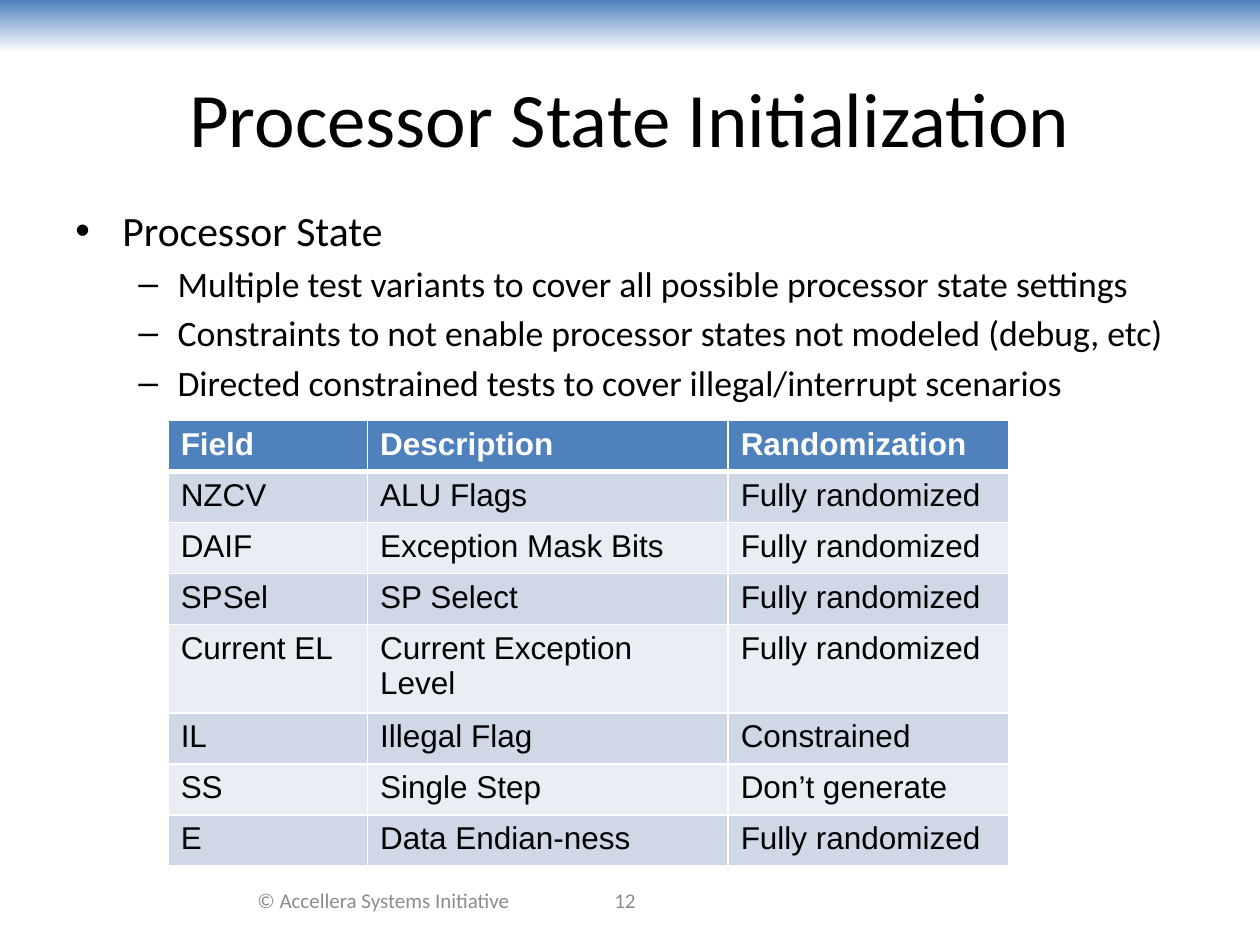
from lxml import etree
from pptx import Presentation
from pptx.dml.color import RGBColor
from pptx.enum import shapes, text
from pptx.oxml.ns import qn
from pptx.util import Cm, Pt

# Content
TITLE = "Processor State Initialization"
BULLETS = [
    (0, "Processor State"),
    (1, "Multiple test variants to cover all possible processor state settings"),
    (1, "Constraints to not enable processor states not modeled (debug, etc)"),
    (1, "Directed constrained tests to cover illegal/interrupt scenarios"),
]
STATE_FIELDS = [
    ("Field", "Description", "Randomization"),
    ("NZCV", "ALU Flags", "Fully randomized"),
    ("DAIF", "Exception Mask Bits", "Fully randomized"),
    ("SPSel", "SP Select", "Fully randomized"),
    ("Current EL", "Current Exception Level", "Fully randomized"),
    ("IL", "Illegal Flag", "Constrained"),
    ("SS", "Single Step", "Don’t generate"),
    ("E", "Data Endian-ness", "Fully randomized"),
]
# Footer text, left and width in cm
FOOTERS = [("© Accellera Systems Initiative", 4.66, 6.14), ("12", 10.16, 4.88)]

# Style
COLORS = {"blue": "4F81BD", "white": "FFFFFF", "black": "000000",
          "gray": "8C8C8C", "band_dark": "D0D8E8", "band_light": "E9EDF4"}
# Per level: bullet, size pt, left margin cm, hanging cm, space before pt
LEVELS = [("•", 23.8, 0.95, 0.95, 0), ("–", 20.4, 2.06, 0.79, 3.8)]
COLUMN_WIDTHS = (4.02, 7.27, 5.65)
ROW_HEIGHT = 1.03


def color(name):
    return RGBColor.from_string(COLORS[name])


def style(paragraph, size, color_name, font="Calibri", bold=False):
    paragraph.font.name = font
    paragraph.font.size = Pt(size)
    paragraph.font.bold = bold
    paragraph.font.color.rgb = color(color_name)


def add_text_frame(slide, left, top, width, height, anchor):
    box = slide.shapes.add_textbox(Cm(left), Cm(top), Cm(width), Cm(height))
    frame = box.text_frame
    frame.word_wrap = True
    frame.vertical_anchor = anchor
    return frame


def add_centered(slide, words, left, top, width, height, size, color_name):
    frame = add_text_frame(slide, left, top, width, height, text.MSO_ANCHOR.MIDDLE)
    paragraph = frame.paragraphs[0]
    paragraph.text = words
    paragraph.alignment = text.PP_ALIGN.CENTER
    style(paragraph, size, color_name)


def add_band(slide, width):
    band = slide.shapes.add_shape(shapes.MSO_SHAPE.RECTANGLE, 0, 0, width, Cm(1.06))
    band.shadow.inherit = False
    band.line.fill.background()
    band.fill.gradient()
    band.fill.gradient_angle = 270
    for stop, position, name in zip(band.fill.gradient_stops, (0, 1), ("blue", "white")):
        stop.position = position
        stop.color.rgb = color(name)


def add_bullets(slide):
    frame = add_text_frame(slide, 1.27, 4.01, 24.13, 3.81, text.MSO_ANCHOR.TOP)
    for index, (level, words) in enumerate(BULLETS):
        mark, size, margin, hanging, space = LEVELS[level]
        paragraph = frame.add_paragraph() if index else frame.paragraphs[0]
        paragraph.text = words
        paragraph.level = level
        paragraph.space_before = Pt(space)
        properties = paragraph._p.get_or_add_pPr()
        properties.set("marL", str(Cm(margin)))
        properties.set("indent", str(-Cm(hanging)))
        etree.SubElement(properties, qn("a:buFont"), typeface="Arial")
        etree.SubElement(properties, qn("a:buChar"), char=mark)
        style(paragraph, size, "black")


def set_borders(cell, top, bottom):
    properties = cell._tc.get_or_add_tcPr()
    for side, width in (("L", 1), ("R", 1), ("T", top), ("B", bottom)):
        line = etree.SubElement(properties, qn(f"a:ln{side}"), w=str(Pt(width)))
        fill = etree.SubElement(line, qn("a:solidFill"))
        etree.SubElement(fill, qn("a:srgbClr"), val=COLORS["white"])


def add_state_table(slide):
    rows = len(STATE_FIELDS)
    table = slide.shapes.add_table(
        rows, len(COLUMN_WIDTHS), Cm(3.39), Cm(8.47),
        Cm(sum(COLUMN_WIDTHS)), Cm(ROW_HEIGHT * rows)).table
    for column, width in zip(table.columns, COLUMN_WIDTHS):
        column.width = Cm(width)
    for row_index, values in enumerate(STATE_FIELDS):
        table.rows[row_index].height = Cm(ROW_HEIGHT)
        header = row_index == 0
        band = "blue" if header else ("band_light", "band_dark")[row_index % 2]
        for column_index, value in enumerate(values):
            cell = table.cell(row_index, column_index)
            set_borders(cell, 3 if row_index == 1 else 1, 3 if header else 1)
            cell.fill.solid()
            cell.fill.fore_color.rgb = color(band)
            cell.text = value
            style(cell.text_frame.paragraphs[0], 18,
                  "white" if header else "black", "Arial", header)


def main():
    presentation = Presentation()
    presentation.slide_width, presentation.slide_height = Cm(25.4), Cm(19.05)
    slide = presentation.slides.add_slide(presentation.slide_layouts[6])

    # Heading
    add_band(slide, presentation.slide_width)
    add_centered(slide, TITLE, 1.27, 0.76, 22.86, 3.18, 44, "black")
    # Body
    add_bullets(slide)
    add_state_table(slide)
    # Footer
    for words, left, width in FOOTERS:
        add_centered(slide, words, left, 17.65, width, 1.01, 12, "gray")

    presentation.save("out.pptx")


if __name__ == "__main__":
    main()
